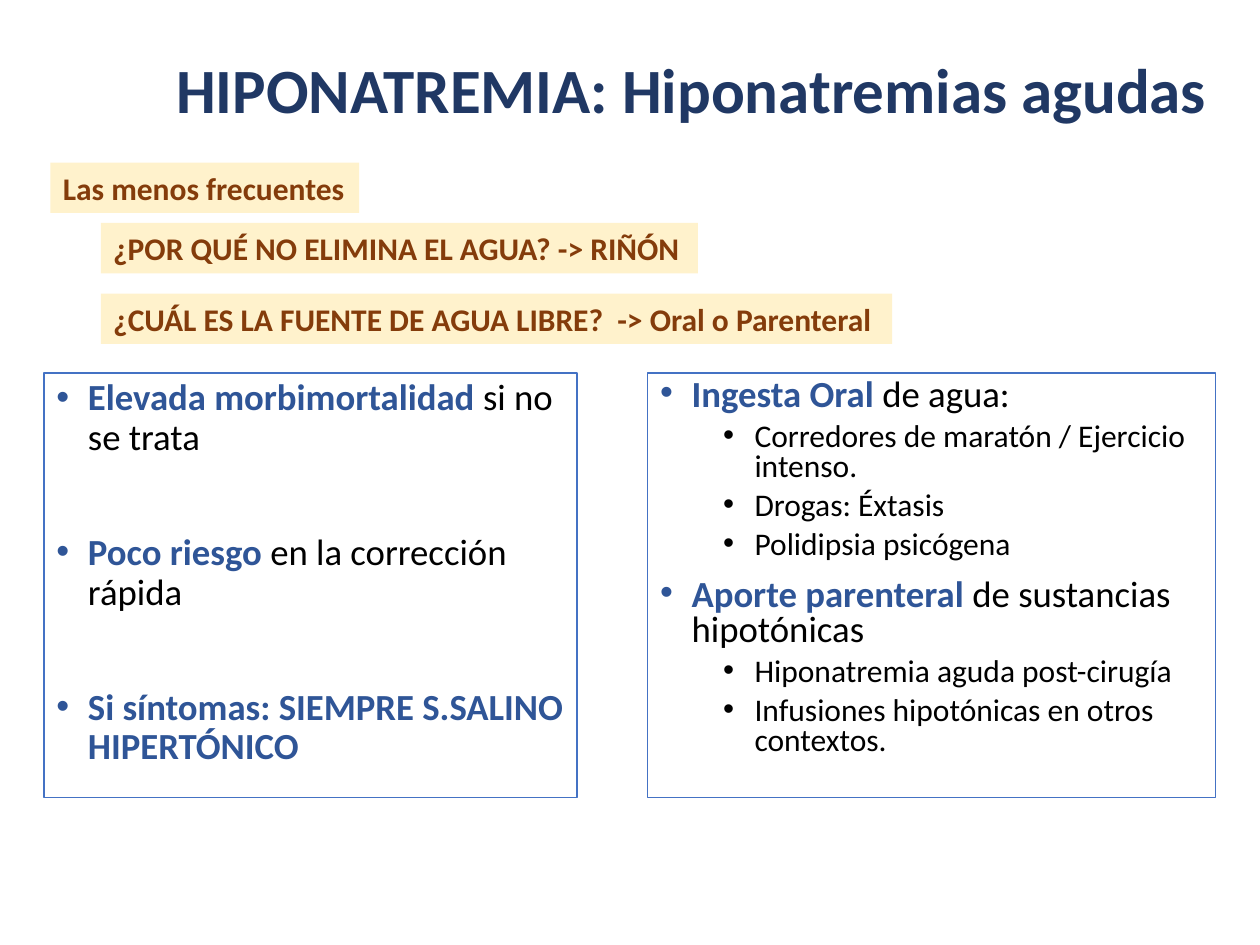
from lxml.etree import SubElement
from pptx import Presentation
from pptx.dml.color import RGBColor
from pptx.enum.text import MSO_ANCHOR, MSO_AUTO_SIZE, PP_ALIGN
from pptx.oxml.ns import qn
from pptx.util import Inches, Pt

NAVY = RGBColor(0x20, 0x38, 0x64)
BLUE = RGBColor(0x2F, 0x55, 0x97)
BORDER = RGBColor(0x44, 0x72, 0xC4)
CREAM = RGBColor(0xFF, 0xF2, 0xCC)
BROWN = RGBColor(0x84, 0x3C, 0x0B)
BLACK = RGBColor(0, 0, 0)
FONT = "Calibri"

LABELS = [
    (0.4, 1.29, 2.45, "Las menos frecuentes"),
    (0.8, 1.77, 4.74, "¿POR QUÉ NO ELIMINA EL AGUA? -> RIÑÓN"),
    (0.8, 2.33, 6.28, "¿CUÁL ES LA FUENTE DE AGUA LIBRE?  -> Oral o Parenteral"),
]
# Each entry: level, highlighted text, plain text
FEATURES = [
    (0, "Elevada morbimortalidad ", "si no se trata"),
    (0, "Poco riesgo ", "en la corrección rápida"),
    (0, "Si síntomas: SIEMPRE S.SALINO HIPERTÓNICO", ""),
]
CAUSES = [
    (0, "Ingesta Oral ", "de agua:"),
    (1, "", "Corredores de maratón / Ejercicio intenso."),
    (1, "", "Drogas: Éxtasis"),
    (1, "", "Polidipsia psicógena"),
    (0, "Aporte parenteral ", "de sustancias hipotónicas"),
    (1, "", "Hiponatremia aguda post-cirugía"),
    (1, "", "Infusiones hipotónicas en otros contextos."),
]


def add_span(para, text, size, color, bold=False):
    span = para.add_run()
    span.text = text
    span.font.name = FONT
    span.font.size = Pt(size)
    span.font.bold = bold
    span.font.color.rgb = color


def add_box(page, left, top, width, height):
    box = page.shapes.add_textbox(
        Inches(left), Inches(top), Inches(width), Inches(height))
    box.text_frame.word_wrap = True
    return box


def add_title(page, text):
    frame = add_box(page, 1.3, 0.01, 8.62, 1.45).text_frame
    frame.vertical_anchor = MSO_ANCHOR.MIDDLE
    para = frame.paragraphs[0]
    para.line_spacing = 0.9
    add_span(para, text, 36, NAVY, bold=True)


def add_label(page, left, top, width, text):
    box = add_box(page, left, top, width, 0.4)
    box.fill.solid()
    box.fill.fore_color.rgb = CREAM
    box.text_frame.word_wrap = False
    box.text_frame.auto_size = MSO_AUTO_SIZE.SHAPE_TO_FIT_TEXT
    para = box.text_frame.paragraphs[0]
    para.alignment = PP_ALIGN.LEFT
    add_span(para, text, 18, BROWN, bold=True)


def set_bullet(para, level):
    """Give the paragraph a hanging bullet, indented by its level."""
    para.level = level
    props = para._p.get_or_add_pPr()
    props.set("marL", str(Inches(0.25 + 0.5 * level)))
    props.set("indent", str(Inches(-0.25)))
    SubElement(props, qn("a:buFont")).set("typeface", "Arial")
    SubElement(props, qn("a:buChar")).set("char", "•")


def add_bullet_panel(page, left, width, items, line_spacing, gaps):
    """Draw a framed list; gaps holds the space before each level."""
    box = add_box(page, left, 2.96, width, 3.37)
    box.line.color.rgb = BORDER
    box.line.width = Pt(0.75)
    frame = box.text_frame
    for index, (level, strong, plain) in enumerate(items):
        para = frame.add_paragraph() if index else frame.paragraphs[0]
        para.line_spacing = line_spacing
        para.space_before = Pt(gaps[level] if index else 0)
        set_bullet(para, level)
        size = 18 if level else 21
        if strong:
            add_span(para, strong, size, BLUE, bold=True)
        if plain:
            add_span(para, plain, size, BLACK)


def main():
    deck = Presentation()
    deck.slide_width, deck.slide_height = Inches(10), Inches(7.5)
    page = deck.slides.add_slide(deck.slide_layouts[6])
    add_title(page, "HIPONATREMIA: Hiponatremias agudas")
    add_bullet_panel(page, 0.35, 4.23, FEATURES, 0.9, gaps=(43, 5))
    add_bullet_panel(page, 5.14, 4.51, CAUSES, 0.8, gaps=(10, 5))
    for label in LABELS:
        add_label(page, *label)
    deck.save("out.pptx")


if __name__ == "__main__":
    main()
